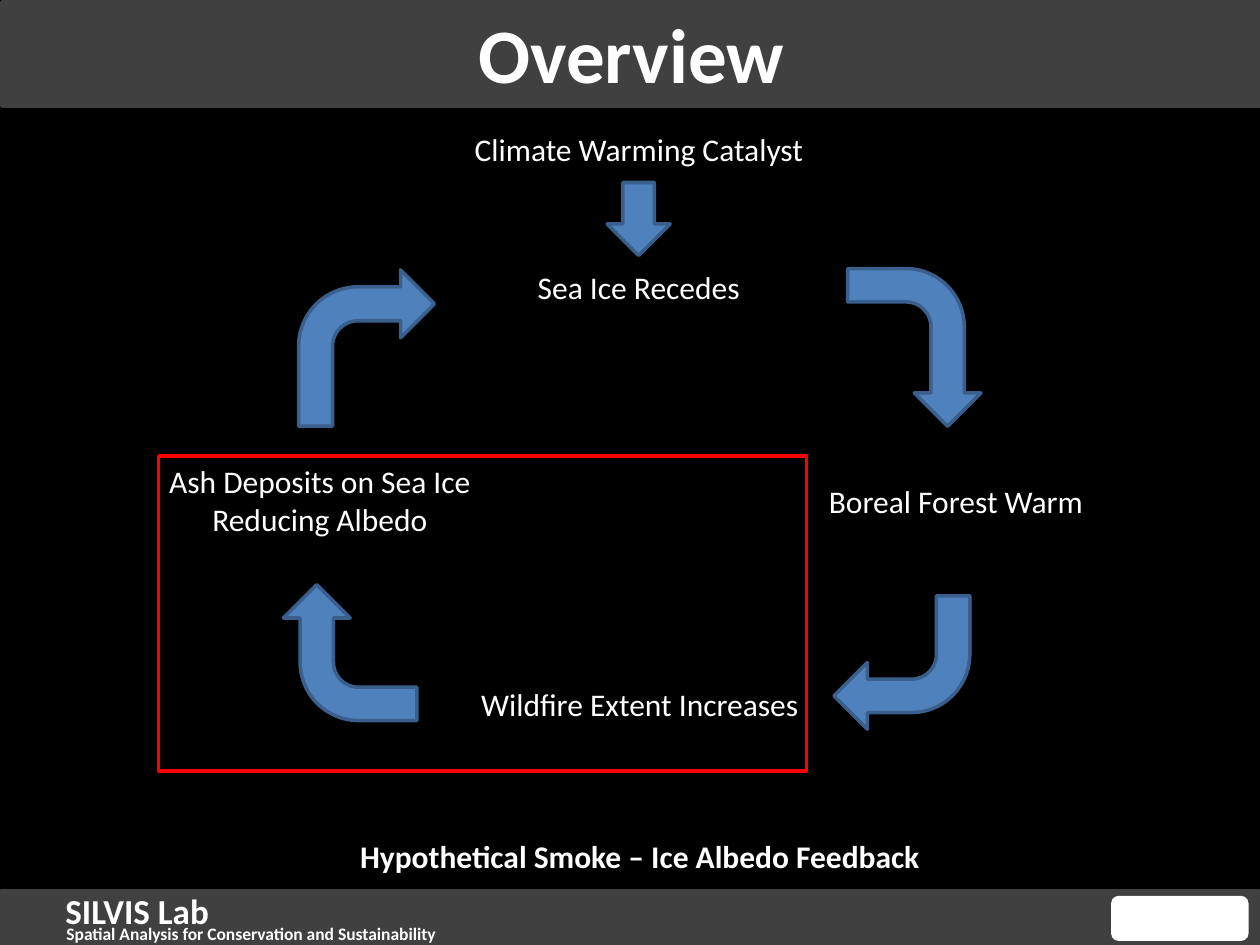
import pptx
import pptx.util
import pptx.dml.color
import pptx.enum.shapes
import pptx.enum.text

Cm = pptx.util.Cm
Pt = pptx.util.Pt
SHAPE = pptx.enum.shapes.MSO_SHAPE
ALIGN = pptx.enum.text.PP_ALIGN
ANCHOR = pptx.enum.text.MSO_ANCHOR

FONT = "Calibri"
COLORS = {
    "background": "000000",
    "band": "404040",
    "text": "FFFFFF",
    "arrow": "4F81BD",
    "arrow_edge": "3A5F8C",
    "highlight": "FF0000",
}

# Each cycle arrow: left, top, width, height before rotation, then rotation
CYCLE_ARROWS = [
    (16.84, 5.66, 3.18, 2.69, 90),
    (16.81, 12.01, 2.74, 2.69, 180),
    (5.69, 11.81, 2.74, 2.69, 270),
    (6.02, 5.44, 2.74, 3.15, 0),
]

# Each one-line label: text, left, top, width, bold
LABELS = [
    ("Climate Warming Catalyst", 9.32, 2.49, 7.14, False),
    ("Sea Ice Recedes", 10.59, 5.28, 4.65, False),
    ("Boreal Forest Warm", 16.46, 9.6, 5.72, False),
    ("Wildfire Extent Increases", 9.45, 13.69, 6.96, False),
    ("Hypothetical Smoke – Ice Albedo Feedback", 7.01, 16.74, 11.86, True),
]


def color(name):
    return pptx.dml.color.RGBColor.from_string(COLORS[name])


def write(box, text, size, bold=False, align=ALIGN.LEFT):
    para = box.text_frame.paragraphs[0]
    para.alignment = align
    span = para.add_run()
    span.text = text
    span.font.name = FONT
    span.font.size = Pt(size)
    span.font.bold = bold
    span.font.color.rgb = color("text")


def add_text(page, text, place, size, bold=False, align=ALIGN.LEFT, wrap=True):
    box = page.shapes.add_textbox(*map(Cm, place))
    box.text_frame.word_wrap = wrap
    write(box, text, size, bold, align)


def add_figure(page, kind, place, fill=None, edge=None, edge_width=2):
    """Add a preset shape; without a fill or edge colour that part is empty."""
    figure = page.shapes.add_shape(kind, *map(Cm, place))
    figure.shadow.inherit = False
    if fill:
        figure.fill.solid()
        figure.fill.fore_color.rgb = color(fill)
    else:
        figure.fill.background()
    if edge:
        figure.line.color.rgb = color(edge)
        figure.line.width = Pt(edge_width)
    else:
        figure.line.fill.background()
    return figure


def add_bands(page):
    for place in [(0.05, 0.05, 25.35, 2.08), (0.03, 17.98, 25.35, 1.04)]:
        add_figure(page, SHAPE.RECTANGLE, place, "band", "band", 3)
    add_text(page, "SILVIS Lab", (1.07, 17.81, 6.17, 1.12), 20, bold=True)
    add_text(page, "Spatial Analysis for Conservation and Sustainability",
             (1.09, 18.49, 12.5, 0.43), 10, bold=True)
    add_figure(page, SHAPE.ROUNDED_RECTANGLE, (22.4, 18.06, 2.77, 0.91), "text")


def place_title(page, text):
    """Format the title and lift it above the bands."""
    title = page.shapes.title
    title.left, title.top, title.width, title.height = map(
        Cm, (0.05, 0, 25.35, 2.11))
    title.text_frame.vertical_anchor = ANCHOR.MIDDLE
    write(title, text, 44, bold=True, align=ALIGN.CENTER)
    title.element.getparent().append(title.element)


def add_cycle(page):
    for text, left, top, width, bold in LABELS:
        add_text(page, text, (left, top, width, 1.02), 18, bold, wrap=False)
    add_text(page, "Ash Deposits on Sea Ice Reducing Albedo",
             (2.97, 9.19, 6.96, 1.8), 18, align=ALIGN.CENTER)
    for *place, rotation in CYCLE_ARROWS:
        arrow = add_figure(page, SHAPE.BENT_ARROW, place, "arrow", "arrow_edge")
        arrow.rotation = rotation
    add_figure(page, SHAPE.DOWN_ARROW, (12.24, 3.68, 1.27, 1.47),
               "arrow", "arrow_edge")
    add_figure(page, SHAPE.RECTANGLE, (3.2, 9.19, 13.06, 6.35),
               edge="highlight")


def main():
    deck = pptx.Presentation()
    deck.slide_width, deck.slide_height = Cm(25.4), Cm(19.05)
    page = deck.slides.add_slide(deck.slide_layouts.get_by_name("Title Only"))
    page.background.fill.solid()
    page.background.fill.fore_color.rgb = color("background")
    add_bands(page)
    place_title(page, "Overview")
    add_cycle(page)
    deck.save("out.pptx")


if __name__ == "__main__":
    main()
